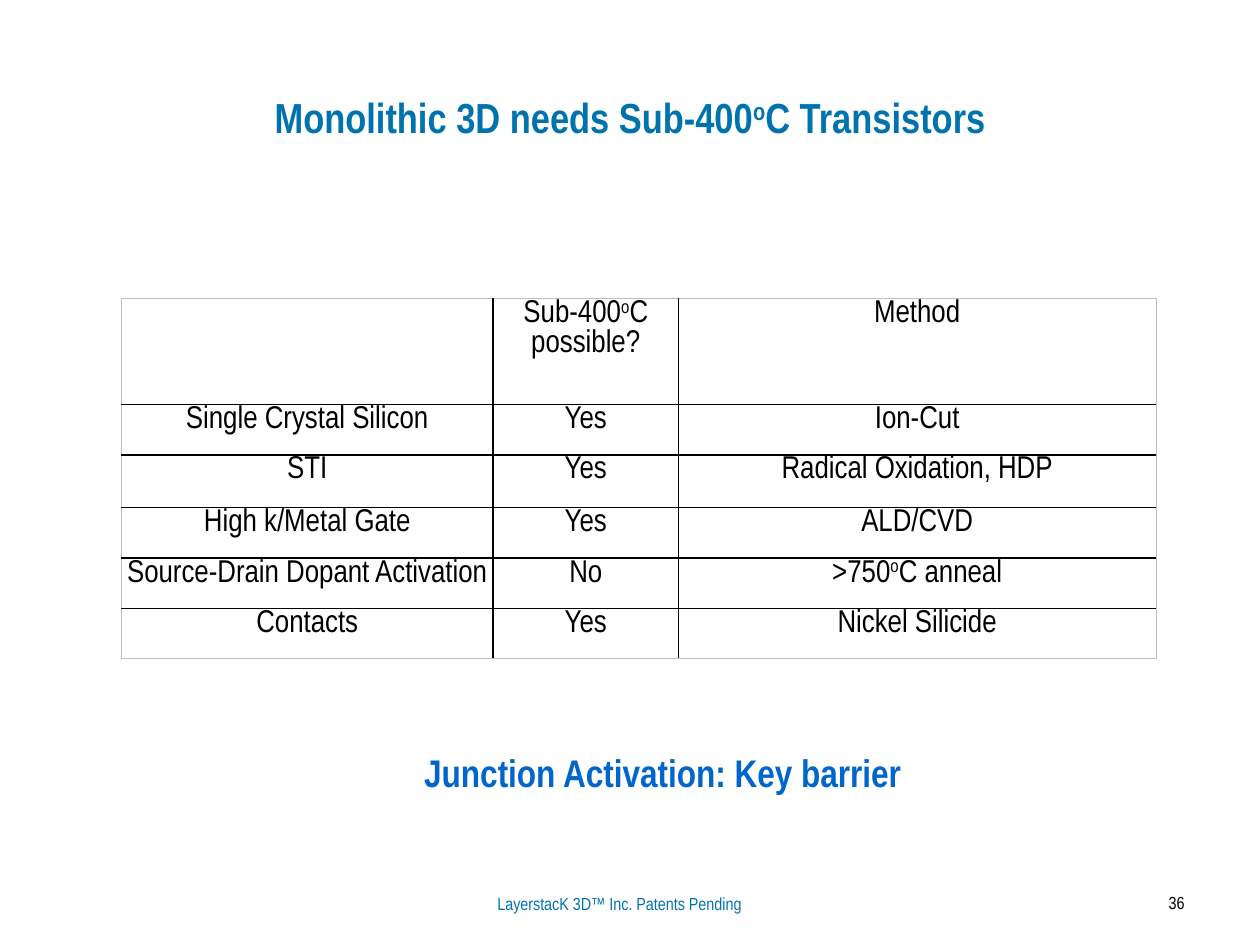
from dataclasses import dataclass

from lxml.etree import SubElement
from pptx import Presentation
from pptx.dml.color import RGBColor
from pptx.enum.text import MSO_ANCHOR, PP_ALIGN
from pptx.oxml.ns import qn
from pptx.util import Pt

FACE = "Arial Narrow"
TEAL, BLUE, BLACK, GREY = "0073AE", "0066CC", "000000", "BFBFBF"


@dataclass
class Style:
    size: float
    color: str
    bold: bool = False
    align: PP_ALIGN = PP_ALIGN.CENTER


@dataclass
class Label:
    text: str
    box: tuple[float, float, float, float]
    style: Style


def paint(target, color: str) -> None:
    target.rgb = RGBColor.from_string(color)


def write(frame, text: str, style: Style) -> None:
    """Fill a frame; text between carets is raised."""
    frame.word_wrap = True
    para = frame.paragraphs[0]
    para.alignment = style.align
    for i, part in enumerate(text.split("^")):
        run = para.add_run()
        run.text = part
        font = run.font
        font.name, font.size, font.bold = FACE, Pt(style.size), style.bold
        paint(font.color, style.color)
        if i % 2:
            run._r.get_or_add_rPr().set("baseline", "30000")


def place(shape, box: tuple[float, float, float, float]) -> None:
    shape.left, shape.top, shape.width, shape.height = map(Pt, box)


def edge(cell, side: str, color: str, width: float) -> None:
    line = SubElement(cell._tc.get_or_add_tcPr(), qn(f"a:ln{side}"), w=str(Pt(width)))
    fill = SubElement(line, qn("a:solidFill"))
    SubElement(fill, qn("a:srgbClr"), val=color)


def draw_grid(slide, rows: list, left: float, top: float,
              widths: list[float], heights: list[float], style: Style) -> None:
    frame = slide.shapes.add_table(len(heights), len(widths), Pt(left), Pt(top),
                                   Pt(sum(widths)), Pt(sum(heights)))
    grid = frame.table
    grid.first_row = grid.horz_banding = False
    for col, width in zip(grid.columns, widths):
        col.width = Pt(width)
    for row, height in zip(grid.rows, heights):
        row.height = Pt(height)
    for r, row in enumerate(rows):
        for c, text in enumerate(row):
            cell = grid.cell(r, c)
            cell.margin_left = cell.margin_right = Pt(0.72)
            cell.margin_top = cell.margin_bottom = Pt(0.72)
            # Grey outer frame, black inner rules
            outer = {"L": c == 0, "R": c == len(widths) - 1,
                     "T": r == 0, "B": r == len(heights) - 1}
            for side, rim in outer.items():
                edge(cell, side, GREY if rim else BLACK, 0.5 if rim else 1)
            cell.fill.background()
            if text:
                write(cell.text_frame, text, style)


ROWS = [
    ("", "Sub-400^o^C possible?", "Method"),
    ("Single Crystal Silicon", "Yes", "Ion-Cut"),
    ("STI", "Yes", "Radical Oxidation, HDP"),
    ("High k/Metal Gate", "Yes", "ALD/CVD"),
    ("Source-Drain Dopant Activation", "No", ">750^o^C anneal"),
    ("Contacts", "Yes", "Nickel Silicide"),
]

LABELS = [
    Label("Junction Activation: Key barrier", (72.7, 424.4, 612, 44.6),
          Style(22, BLUE, True)),
    Label("LayerstacK 3D™ Inc. Patents Pending", (239.8, 506.9, 228.2, 18.7),
          Style(10, TEAL)),
    Label("36", (604, 506.2, 80, 23.8), Style(10, BLACK, align=PP_ALIGN.RIGHT)),
]


def main() -> None:
    deck = Presentation()
    deck.slide_width, deck.slide_height = Pt(720), Pt(540)
    slide = deck.slides.add_slide(deck.slide_layouts[5])

    # Title
    title = slide.shapes.title
    place(title, (36, 21.6, 648, 90))
    title.text_frame.vertical_anchor = MSO_ANCHOR.MIDDLE
    write(title.text_frame, "Monolithic 3D needs Sub-400^o^C Transistors",
          Style(24, TEAL, True))

    # Process table
    draw_grid(slide, ROWS, 69.4, 170.6, [212.4, 105.9, 272.9],
              [60.5, 28.8, 30.2, 28.8, 28.8, 28.8], Style(18, BLACK))

    # Takeaway, footer and page number
    for label in LABELS:
        box = slide.shapes.add_textbox(*map(Pt, label.box))
        write(box.text_frame, label.text, label.style)

    deck.save("out.pptx")


if __name__ == "__main__":
    main()
